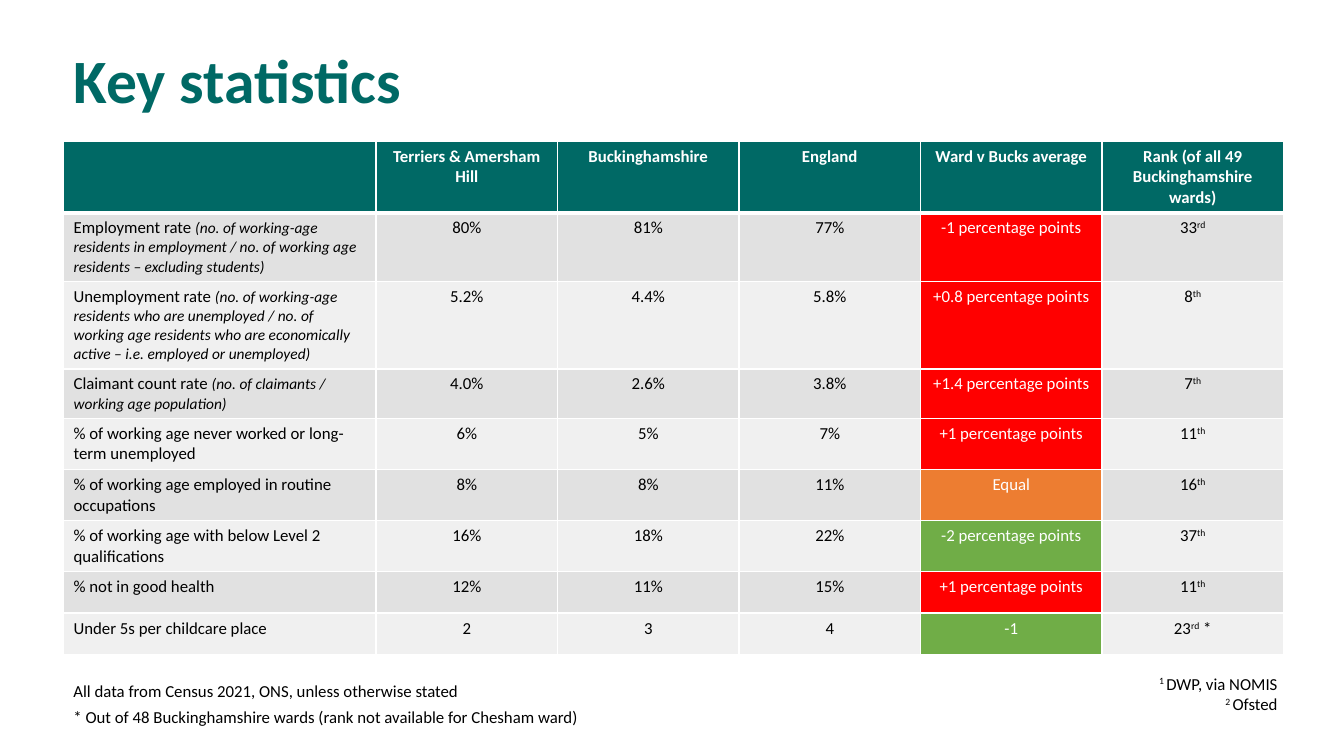
from lxml import etree
from pptx import Presentation
from pptx.dml.color import RGBColor
from pptx.enum.text import MSO_ANCHOR, MSO_AUTO_SIZE, PP_ALIGN
from pptx.oxml.ns import qn
from pptx.util import Pt

LEFT, CENTER, RIGHT = PP_ALIGN.LEFT, PP_ALIGN.CENTER, PP_ALIGN.RIGHT
MIDDLE = MSO_ANCHOR.MIDDLE
NO_FIT, GROW = MSO_AUTO_SIZE.NONE, MSO_AUTO_SIZE.SHAPE_TO_FIT_TEXT
PX = 9144
TEAL, WHITE, BLACK = "006965", "FFFFFF", "000000"
RED, ORANGE, GREEN = "FF0000", "ED7D31", "70AD47"
BANDS = ["E1E1E1", "F0F0F0"]


def rgb(color):
    return RGBColor.from_string(color)


def add_text(p, text, size=12, color=BLACK, bold=False, italic=False, sup=False, align=LEFT):
    p.alignment = align
    r = p.add_run()
    r.text = text
    f = r.font
    f.name, f.size, f.bold, f.italic = "Calibri", Pt(size), bold, italic
    f.color.rgb = rgb(color)
    if sup:
        r._r.get_or_add_rPr().set("baseline", "30000")


prs = Presentation()
prs.slide_width, prs.slide_height = 1333 * PX, 750 * PX
s = prs.slides.add_slide(prs.slide_layouts[5])

title = s.shapes.title
title.left, title.top, title.width, title.height = 63 * PX, 36 * PX, 1150 * PX, 93 * PX
tf = title.text_frame
tf.auto_size, tf.vertical_anchor, tf.word_wrap = NO_FIT, MIDDLE, True
tf.paragraphs[0].line_spacing = 0.9
add_text(tf.paragraphs[0], "Key statistics", size=44, color=TEAL, bold=True)

headers = ["", "Terriers & Amersham Hill", "Buckinghamshire", "England",
           "Ward v Bucks average", "Rank (of all 49 Buckinghamshire wards)"]
stats = [
    ("Employment rate ",
     "(no. of working-age residents in employment / no. of working age residents – excluding students)",
     ["80%", "81%", "77%"], "-1 percentage points", RED, "33", "rd", ""),
    ("Unemployment rate ",
     "(no. of working-age residents who are unemployed / no. of working age residents "
     "who are economically active – i.e. employed or unemployed)",
     ["5.2%", "4.4%", "5.8%"], "+0.8 percentage points", RED, "8", "th", ""),
    ("Claimant count rate ", "(no. of claimants / working age population)",
     ["4.0%", "2.6%", "3.8%"], "+1.4 percentage points", RED, "7", "th", ""),
    ("% of working age never worked or long-term unemployed", "",
     ["6%", "5%", "7%"], "+1 percentage points", RED, "11", "th", ""),
    ("% of working age employed in routine occupations", "",
     ["8%", "8%", "11%"], "Equal", ORANGE, "16", "th", ""),
    ("% of working age with below Level 2 qualifications", "",
     ["16%", "18%", "22%"], "-2 percentage points", GREEN, "37", "th", ""),
    ("% not in good health", "",
     ["12%", "11%", "15%"], "+1 percentage points", RED, "11", "th", ""),
    ("Under 5s per childcare place", "",
     ["2", "3", "4"], "-1", GREEN, "23", "rd", " *"),
]

frame = s.shapes.add_table(len(stats) + 1, len(headers), 63 * PX, 140 * PX, 1208 * PX, 501 * PX)
table = frame.table
for i, col in enumerate(table.columns):
    col.width = (180 if i else 310) * PX
for row in table.rows:
    row.height = 41 * PX
frame.height = 501 * PX

for i in range(len(stats) + 1):
    for j in range(len(headers)):
        cell = table.cell(i, j)
        tcPr = cell._tc.get_or_add_tcPr()
        for side in ("lnL", "lnR", "lnT", "lnB"):
            thick = (i == 0 and side == "lnB") or (i == 1 and side == "lnT")
            ln = etree.SubElement(tcPr, qn("a:" + side), w=str(Pt(3 if thick else 1)))
            fill = etree.SubElement(ln, qn("a:solidFill"))
            etree.SubElement(fill, qn("a:srgbClr"), val=WHITE)
        cell.fill.solid()
        cell.fill.fore_color.rgb = rgb(BANDS[(i - 1) % 2] if i else TEAL)

for j, header in enumerate(headers):
    if header:
        add_text(table.cell(0, j).text_frame.paragraphs[0], header,
                 color=WHITE, bold=True, align=CENTER)

for i, (name, detail, values, gap, gap_color, rank, suffix, mark) in enumerate(stats, 1):
    ps = [table.cell(i, j).text_frame.paragraphs[0] for j in range(len(headers))]
    add_text(ps[0], name)
    if detail:
        add_text(ps[0], detail, size=11, italic=True)
    for p, value in zip(ps[1:4], values):
        add_text(p, value, align=CENTER)
    add_text(ps[4], gap, color=WHITE, align=CENTER)
    table.cell(i, 4).fill.fore_color.rgb = rgb(gap_color)
    add_text(ps[5], rank, align=CENTER)
    add_text(ps[5], suffix, sup=True, align=CENTER)
    if mark:
        add_text(ps[5], mark, align=CENTER)

notes = [
    (63, 670, 721, 30, LEFT, [("", "All data from Census 2021, ONS, unless otherwise stated")]),
    (784, 663, 493, 50, RIGHT, [("1 ", "DWP, via NOMIS"), ("2 ", "Ofsted")]),
    (63, 696, 721, 30, LEFT,
     [("", "* Out of 48 Buckinghamshire wards (rank not available for Chesham ward)")]),
]
for x, y, w, h, align, lines in notes:
    tf = s.shapes.add_textbox(x * PX, y * PX, w * PX, h * PX).text_frame
    tf.word_wrap, tf.auto_size = True, GROW
    for i, (number, text) in enumerate(lines):
        p = tf.add_paragraph() if i else tf.paragraphs[0]
        if number:
            add_text(p, number, sup=True, align=align)
        add_text(p, text, align=align)

prs.save("out.pptx")
